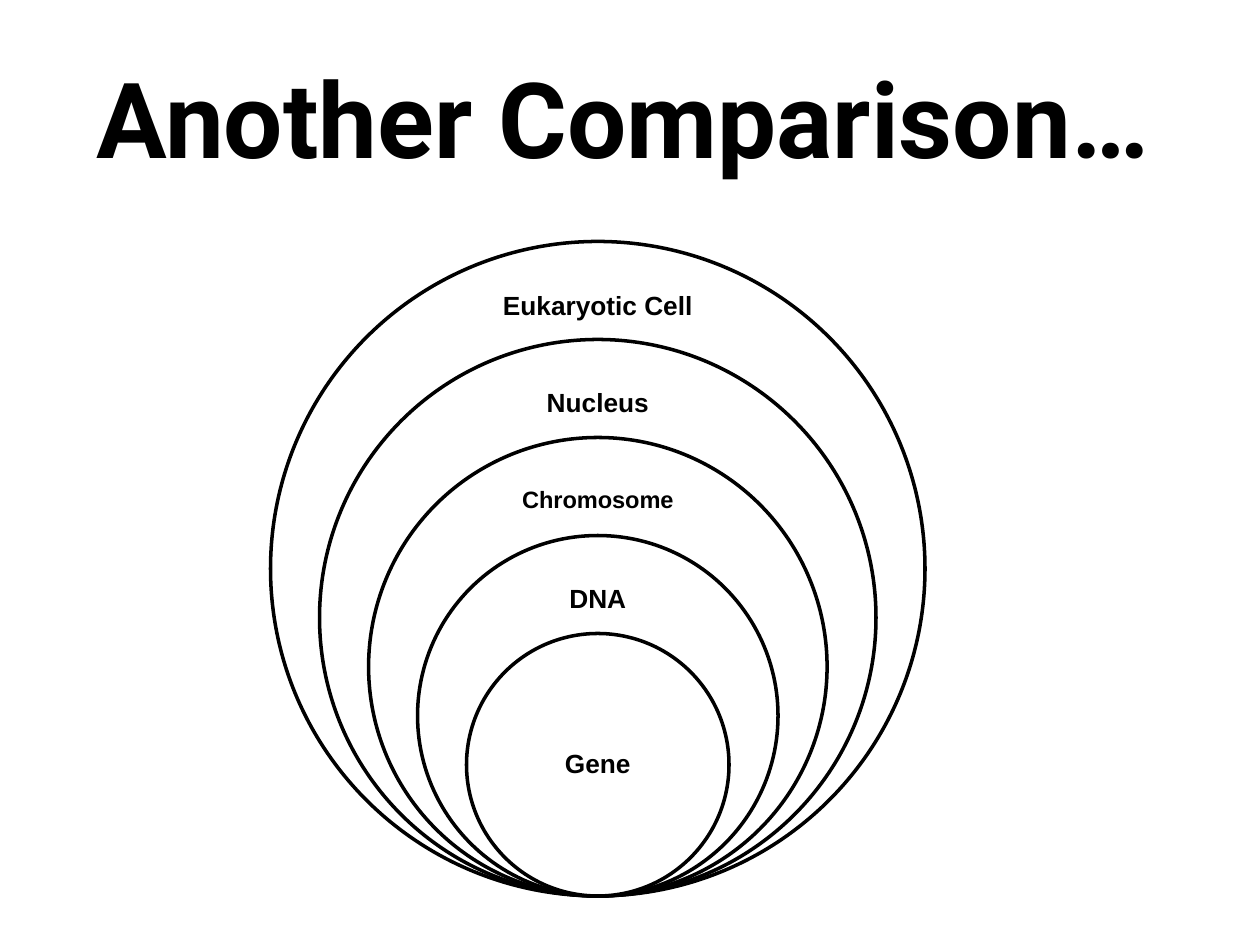
from dataclasses import dataclass

from pptx import Presentation
from pptx.dml.color import RGBColor
from pptx.enum.shapes import MSO_SHAPE
from pptx.enum.text import MSO_ANCHOR, PP_ALIGN
from pptx.slide import Slide
from pptx.util import Pt

OVAL = MSO_SHAPE.OVAL
MIDDLE = MSO_ANCHOR.MIDDLE
CENTER = PP_ALIGN.CENTER

COLORS = {"ink": "000000", "paper": "FFFFFF"}

CIRCLE_CENTER_X = 341.6
CIRCLES_BOTTOM = 512
OUTER_DIAMETER = 374
DIAMETER_STEP = 56
LABEL_OFFSET = 18.5


@dataclass
class Level:
    name: str
    label_width: float
    label_height: float = 36.7
    font_size: float = 15
    inset: float = 8.5


LEVELS = [
    Level("Eukaryotic Cell", 140.4, label_height=37.4),
    Level("Nucleus", 136.8),
    Level("Chromosome", 135.4, label_height=36, font_size=13.5, inset=8),
    Level("DNA", 110.9),
    Level("Gene", 105.8, label_height=74.9),
]


def color(name: str) -> RGBColor:
    return RGBColor.from_string(COLORS[name])


def add_text(slide: Slide, text: str, left: float, top: float, width: float,
             height: float, *, font: str, size: float, inset_x: float,
             inset_y: float, line_spacing: float = 1.0) -> None:
    """Add bold text centred both ways in a box given in points."""
    box = slide.shapes.add_textbox(Pt(left), Pt(top), Pt(width), Pt(height))
    frame = box.text_frame
    frame.word_wrap = True
    frame.vertical_anchor = MIDDLE
    frame.margin_left = frame.margin_right = Pt(inset_x)
    frame.margin_top = frame.margin_bottom = Pt(inset_y)
    paragraph = frame.paragraphs[0]
    paragraph.alignment = CENTER
    paragraph.line_spacing = line_spacing
    run = paragraph.add_run()
    run.text = text
    run.font.name = font
    run.font.size = Pt(size)
    run.font.bold = True
    run.font.color.rgb = color("ink")


def add_circle(slide: Slide, top: float, diameter: float) -> None:
    shape = slide.shapes.add_shape(
        OVAL, Pt(CIRCLE_CENTER_X - diameter / 2), Pt(top), Pt(diameter), Pt(diameter))
    shape.shadow.inherit = False
    shape.fill.solid()
    shape.fill.fore_color.rgb = color("paper")
    shape.line.color.rgb = color("ink")
    shape.line.width = Pt(2)


def add_level(slide: Slide, level: Level, diameter: float, innermost: bool) -> None:
    """Draw one nested circle; the innermost label sits at its centre."""
    circle_top = CIRCLES_BOTTOM - diameter
    add_circle(slide, circle_top, diameter)
    offset = (diameter - level.label_height) / 2 if innermost else LABEL_OFFSET
    add_text(slide, level.name, CIRCLE_CENTER_X - level.label_width / 2,
             circle_top + offset, level.label_width, level.label_height,
             font="Arial", size=level.font_size, inset_x=level.inset,
             inset_y=level.inset, line_spacing=0.9)


def main() -> None:
    presentation = Presentation()
    presentation.slide_width = Pt(720)
    presentation.slide_height = Pt(540)
    slide = presentation.slides.add_slide(presentation.slide_layouts[6])
    slide.background.fill.solid()
    slide.background.fill.fore_color.rgb = color("paper")

    for index, level in enumerate(LEVELS):
        add_level(slide, level, OUTER_DIAMETER - index * DIAMETER_STEP,
                  innermost=index == len(LEVELS) - 1)
    add_text(slide, "Another Comparison…", 48, 12, 616, 109,
             font="Roboto", size=60, inset_x=7.2, inset_y=3.6)

    presentation.save("out.pptx")


if __name__ == "__main__":
    main()
